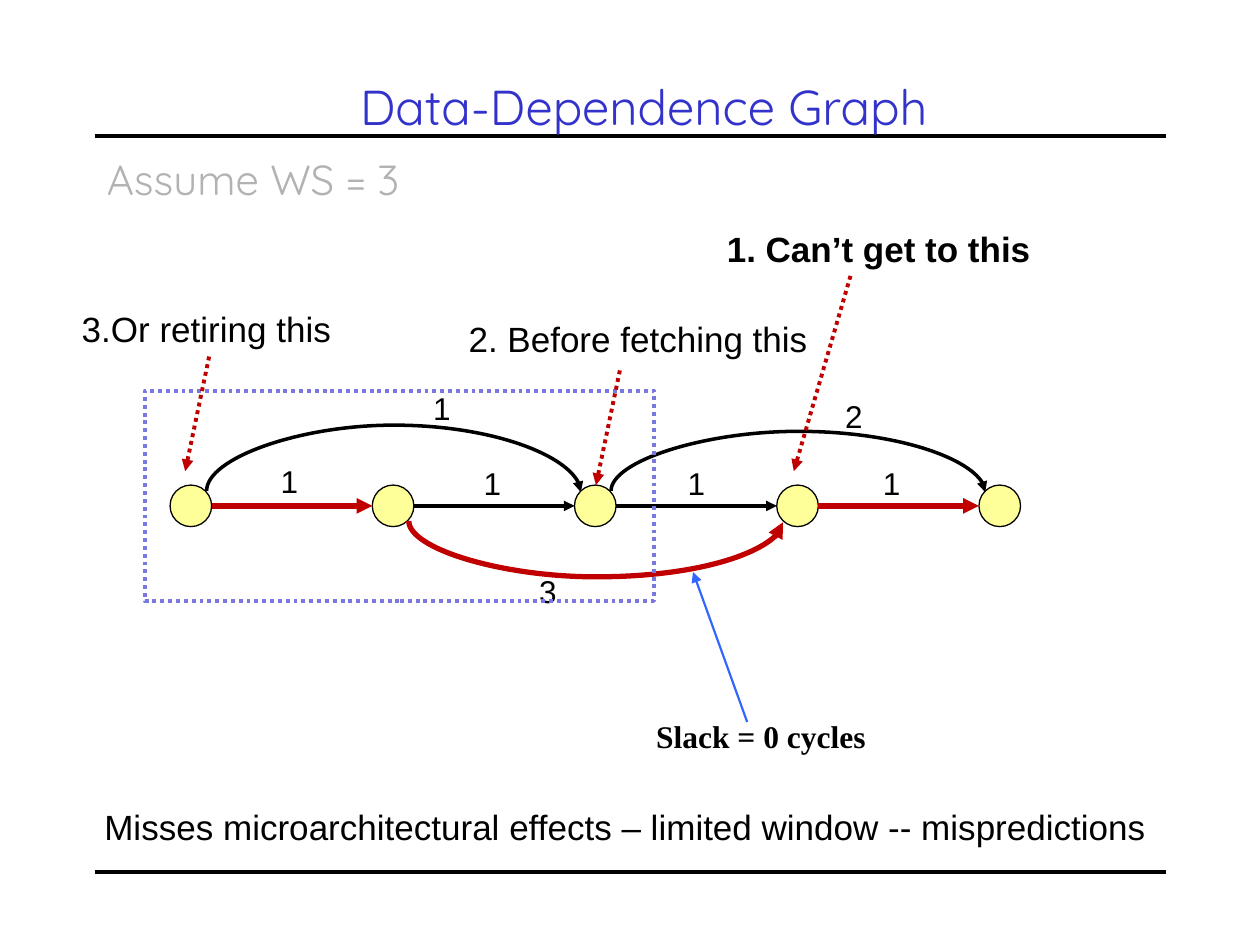
import pptx
import pptx.util
import pptx.dml.color
import pptx.enum.dml
import pptx.enum.shapes
import pptx.enum.text
import pptx.oxml
import pptx.oxml.ns

Inches = pptx.util.Inches
RGBColor = pptx.dml.color.RGBColor
MSO_CONNECTOR = pptx.enum.shapes.MSO_CONNECTOR
MSO_SHAPE = pptx.enum.shapes.MSO_SHAPE
PP_ALIGN = pptx.enum.text.PP_ALIGN
DOTTED = pptx.enum.dml.MSO_LINE.ROUND_DOT

BLACK = RGBColor(0x00, 0x00, 0x00)
RED = RGBColor(0xC0, 0x00, 0x00)
YELLOW = RGBColor(0xFF, 0xFF, 0x99)
TITLE_BLUE = RGBColor(0x33, 0x33, 0xCC)
WINDOW_BLUE = RGBColor(0x78, 0x78, 0xDE)
SLACK_BLUE = RGBColor(0x33, 0x66, 0xFF)
GRAY = RGBColor(0xB2, 0xB2, 0xB2)

NODE_TOP = 3.85
NODE_SIZE = 0.33
NODE_LEFTS = [1.35 + 1.605 * index for index in range(5)]
ARC_SPAN = 0.01


def add_child(parent, tag, **attributes):
    child = pptx.oxml.parse_xml(f"<a:{tag} {pptx.oxml.ns.nsdecls('a')}/>")
    for name, value in attributes.items():
        child.set(name, value)
    parent.append(child)


class GraphSlide:
    font_name = "Arial"

    def __init__(self, presentation):
        self.slide = presentation.slides.add_slide(presentation.slide_layouts[6])

    def style_line(self, line, color, width, dash=None):
        line.color.rgb = color
        formats = {"width": pptx.util.Pt(width), "dash_style": dash}
        for name, value in formats.items():
            setattr(line, name, value)

    def text(self, words, box, size, color=BLACK, font=None, bold=False,
             align=PP_ALIGN.LEFT, wrap=True, anchor=pptx.enum.text.MSO_ANCHOR.TOP):
        shape = self.slide.shapes.add_textbox(*map(Inches, box))
        frame = shape.text_frame
        frame.word_wrap = wrap
        frame.vertical_anchor = anchor
        paragraph = frame.paragraphs[0]
        paragraph.alignment = align
        run = paragraph.add_run()
        run.text = words
        run.font.color.rgb = color
        formats = {"name": font or self.font_name, "size": pptx.util.Pt(size), "bold": bold}
        for name, value in formats.items():
            setattr(run.font, name, value)

    def shape(self, kind, box, color, width, fill=None, dash=None):
        shape = self.slide.shapes.add_shape(kind, *map(Inches, box))
        shape.shadow.inherit = False
        if fill is None:
            shape.fill.background()
        else:
            shape.fill.solid()
            shape.fill.fore_color.rgb = fill
        self.style_line(shape.line, color, width, dash)

    def line(self, start, end, color, width, dash=None, arrow=True,
             kind=MSO_CONNECTOR.STRAIGHT):
        connector = self.slide.shapes.add_connector(kind, *map(Inches, (*start, *end)))
        self.style_line(connector.line, color, width, dash)
        properties = connector.element.spPr
        if arrow:
            add_child(properties.ln, "tailEnd", type="triangle")
        add_child(properties, "effectLst")
        return connector

    def arc(self, start, end_x, rise, color, width):
        x, y = start
        connector = self.line(start, (end_x, y), color, width, kind=MSO_CONNECTOR.CURVE)
        span = end_x - x
        frame = {
            "left": Inches((x + end_x - ARC_SPAN) / 2),
            "top": Inches(y - span / 2),
            "width": Inches(ARC_SPAN),
            "height": Inches(span),
        }
        for name, value in frame.items():
            setattr(connector, name, value)
        properties = connector.element.spPr
        turn, flip = (90, "flipV") if rise > 0 else (270, "flipH")
        properties.xfrm.set("rot", str(turn * 60000))
        properties.xfrm.set(flip, "1")
        bend = round(-rise / ARC_SPAN * 100000)
        adjustments = properties.find(".//" + pptx.oxml.ns.qn("a:avLst"))
        add_child(adjustments, "gd", name="adj1", fmla=f"val {bend}")


def main():
    presentation = pptx.Presentation()
    presentation.slide_width = Inches(10)
    presentation.slide_height = Inches(7.5)
    graph = GraphSlide(presentation)

    for y in (1.08, 6.92):
        graph.line((0.75, y), (9.25, y), BLACK, 2.25, arrow=False)
    graph.text("Data-Dependence Graph", (0.83, 0.42, 8.56, 0.84), 28, TITLE_BLUE,
               "Quicksand", align=PP_ALIGN.CENTER,
               anchor=pptx.enum.text.MSO_ANCHOR.MIDDLE)
    graph.text("Assume WS = 3", (0.75, 1.17, 8.5, 5.67), 24, GRAY, "Quicksand")

    for left in NODE_LEFTS:
        graph.shape(MSO_SHAPE.OVAL, (left, NODE_TOP, NODE_SIZE, NODE_SIZE),
                    BLACK, 0.75, YELLOW)

    middle = NODE_TOP + NODE_SIZE / 2
    edge_styles = [(RED, 3), (BLACK, 2), (BLACK, 2), (RED, 3)]
    for left, following, style in zip(NODE_LEFTS, NODE_LEFTS[1:], edge_styles):
        graph.line((left + NODE_SIZE, middle), (following, middle), *style)

    arcs = [(0, 3.9, 0.53, BLACK, 2), (1, 4.14, -0.45, RED, 3), (2, 3.9, 0.48, BLACK, 2)]
    for node, y, rise, color, width in arcs:
        start = (NODE_LEFTS[node] + 0.29, y)
        graph.arc(start, NODE_LEFTS[node + 2] + 0.05, rise, color, width)

    weights = [("1", 2.13, 3.62), ("1", 3.74, 3.63), ("1", 5.36, 3.63), ("1", 6.91, 3.63),
               ("1", 3.34, 3.04), ("2", 6.61, 3.1), ("3", 4.18, 4.49)]
    for weight, left, top in weights:
        graph.text(weight, (left, top, 0.33, 0.4), 18)

    graph.line((5.93, 5.73), (5.5, 4.54), SLACK_BLUE, 1.25)
    graph.text("Slack = 0 cycles", (5.11, 5.64, 1.93, 0.7), 18,
               font="Times New Roman", bold=True)

    notes = [
        ("Misses microarchitectural effects – limited window -- mispredictions",
         (0.73, 6.34, 8.53, 0.44), False),
        ("1. Can’t get to this", (5.67, 1.76, 2.63, 0.44), True),
        ("2. Before fetching this", (3.62, 2.47, 2.91, 0.44), False),
        ("3.Or retiring this", (0.55, 2.39, 2.19, 0.44), False),
    ]
    for words, box, bold in notes:
        graph.text(words, box, 20, bold=bold, wrap=False)

    graph.shape(MSO_SHAPE.RECTANGLE, (1.15, 3.1, 4.04, 1.67), WINDOW_BLUE, 2.25, dash=DOTTED)
    pointers = [((6.75, 2.19), (6.3, 3.74)), ((4.92, 2.94), (4.73, 3.85)),
                ((1.66, 2.83), (1.47, 3.74))]
    for start, end in pointers:
        graph.line(start, end, RED, 2.25, DOTTED)

    presentation.save("out.pptx")


if __name__ == "__main__":
    main()
